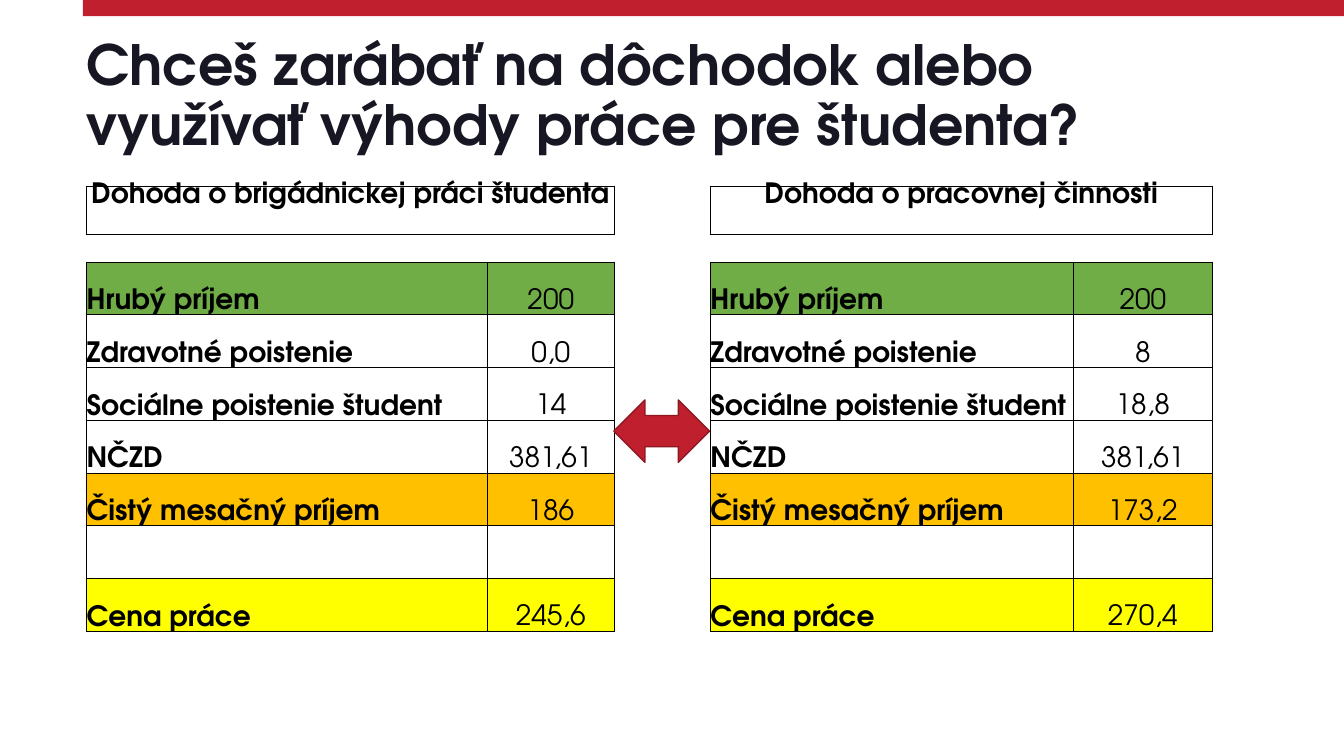
import dataclasses

import lxml.etree
import pptx
import pptx.dml.color
import pptx.enum.shapes
import pptx.enum.text
import pptx.oxml.ns
import pptx.util

Cm = pptx.util.Cm
SHAPE = pptx.enum.shapes.MSO_SHAPE
ALIGN = pptx.enum.text.PP_ALIGN
ANCHOR = pptx.enum.text.MSO_ANCHOR
qn = pptx.oxml.ns.qn


@dataclasses.dataclass
class Theme:
    font: str = "TeX Gyre Adventor"
    red: str = "C0202E"
    dark_red: str = "8E1822"
    ink: str = "171723"
    black: str = "000000"
    green: str = "70AD47"
    orange: str = "FFC000"
    yellow: str = "FFFF00"
    title_size: float = 39.6
    table_size: float = 20
    spacer_size: float = 10
    thin: float = 0.5
    medium: float = 1


class SlideBuilder:
    def __init__(self, page, theme):
        self.page = page
        self.theme = theme

    def colour(self, value):
        return pptx.dml.color.RGBColor.from_string(value)

    def style_text(self, para, size, colour, bold):
        for span in para.runs:
            span.font.name = self.theme.font
            span.font.size = pptx.util.Pt(size)
            span.font.bold = bold
            span.font.color.rgb = self.colour(colour)

    def shape(self, kind, left, top, width, height, fill, line=None):
        shape = self.page.shapes.add_shape(kind, Cm(left), Cm(top), Cm(width), Cm(height))
        shape.shadow.inherit = False
        shape.fill.solid()
        shape.fill.fore_color.rgb = self.colour(fill)
        if line:
            shape.line.color.rgb = self.colour(line)
            shape.line.width = pptx.util.Pt(self.theme.medium)
        else:
            shape.line.fill.background()

    def title(self, text, left, top, width, height):
        box = self.page.shapes.add_textbox(Cm(left), Cm(top), Cm(width), Cm(height))
        frame = box.text_frame
        frame.word_wrap = True
        frame.vertical_anchor = ANCHOR.MIDDLE
        frame.text = text
        para = frame.paragraphs[0]
        para.line_spacing = 0.9
        self.style_text(para, self.theme.title_size, self.theme.ink, True)

    def table(self, left, top, widths, heights):
        holder = self.page.shapes.add_table(
            len(heights), len(widths), Cm(left), Cm(top), Cm(sum(widths)), Cm(sum(heights)))
        table = holder.table
        table.first_row = table.horz_banding = False
        plain_style = "{2D5ABB26-0587-4C30-8999-92F81FD0307C}"
        next(holder.element.iter(qn("a:tableStyleId"))).text = plain_style
        for column, width in zip(table.columns, widths):
            column.width = Cm(width)
        for row, height in zip(table.rows, heights):
            row.height = Cm(height)
        return table

    def borders(self, cell, **weights):
        properties = cell._tc.get_or_add_tcPr()
        for side in "LRTB":
            weight = weights.get(side)
            edge = lxml.etree.SubElement(properties, qn("a:ln" + side))
            if weight:
                edge.set("w", str(pptx.util.Pt(weight)))
                fill = lxml.etree.SubElement(edge, qn("a:solidFill"))
                lxml.etree.SubElement(fill, qn("a:srgbClr"), val=self.theme.black)
            else:
                lxml.etree.SubElement(edge, qn("a:noFill"))

    def cell(self, cell, text="", fill=None, bold=True, align=ALIGN.LEFT,
             anchor=ANCHOR.BOTTOM, spacing=None, **weights):
        self.borders(cell, **weights)
        cell.margin_left = cell.margin_right = cell.margin_top = cell.margin_bottom = 0
        cell.vertical_anchor = anchor
        if fill:
            cell.fill.solid()
            cell.fill.fore_color.rgb = self.colour(fill)
        else:
            cell.fill.background()
        para = cell.text_frame.paragraphs[0]
        if text:
            para.text = text
            para.alignment = align
            para.line_spacing = spacing
            self.style_text(para, self.theme.table_size, self.theme.black, bold)
        else:
            lxml.etree.SubElement(para._p, qn("a:endParaRPr"),
                                  sz=str(int(self.theme.spacer_size * 100)))


def main():
    deck = pptx.Presentation()
    deck.slide_width, deck.slide_height = Cm(33.87), Cm(19.05)
    theme = Theme()
    builder = SlideBuilder(deck.slides.add_slide(deck.slide_layouts[6]), theme)

    builder.shape(SHAPE.RECTANGLE, 2.09, 0, 31.78, 0.41, theme.red)
    builder.title("Chceš zarábať na dôchodok alebo využívať výhody práce pre študenta?",
                  1.93, 0.82, 29.21, 3.28)

    agreements = {0: "Dohoda o brigádnickej práci študenta", 3: "Dohoda o pracovnej činnosti"}
    income_rows = [
        ("Hrubý príjem", "200", "200", theme.green),
        ("Zdravotné poistenie", "0,0", "8", None),
        ("Sociálne poistenie študent", "14", "18,8", None),
        ("NČZD", "381,61", "381,61", None),
        ("Čistý mesačný príjem", "186", "173,2", theme.orange),
        ("", "", "", None),
        ("Cena práce", "245,6", "270,4", theme.yellow),
    ]
    table = builder.table(2.18, 4.69, [10.1, 3.2, 2.42, 9.15, 3.5],
                          [1.21, 0.7] + [1.33] * len(income_rows))

    thin, medium = theme.thin, theme.medium
    for column, agreement in agreements.items():
        table.cell(0, column).merge(table.cell(0, column + 1))
        builder.cell(table.cell(0, column), agreement, align=ALIGN.CENTER, anchor=ANCHOR.TOP,
                     spacing=0.85, L=medium, R=medium, T=medium, B=medium)
        builder.borders(table.cell(0, column + 1), R=medium, T=medium, B=medium)
        for offset in range(2):
            builder.cell(table.cell(1, column + offset), T=medium, B=thin)
    builder.cell(table.cell(0, 2), L=medium, R=medium)
    builder.cell(table.cell(1, 2))

    for row, (label, student, worker, fill) in enumerate(income_rows, start=2):
        for column, amount in zip(agreements, (student, worker)):
            grid = dict(fill=fill, L=thin, R=thin, T=thin, B=thin)
            builder.cell(table.cell(row, column), label, **grid)
            builder.cell(table.cell(row, column + 1), amount, bold=False,
                         align=ALIGN.CENTER, **grid)
        builder.cell(table.cell(row, 2), L=thin, R=thin)

    builder.shape(SHAPE.LEFT_RIGHT_ARROW, 15.47, 10.08, 2.41, 1.57, theme.red, theme.dark_red)
    deck.save("out.pptx")


if __name__ == "__main__":
    main()
